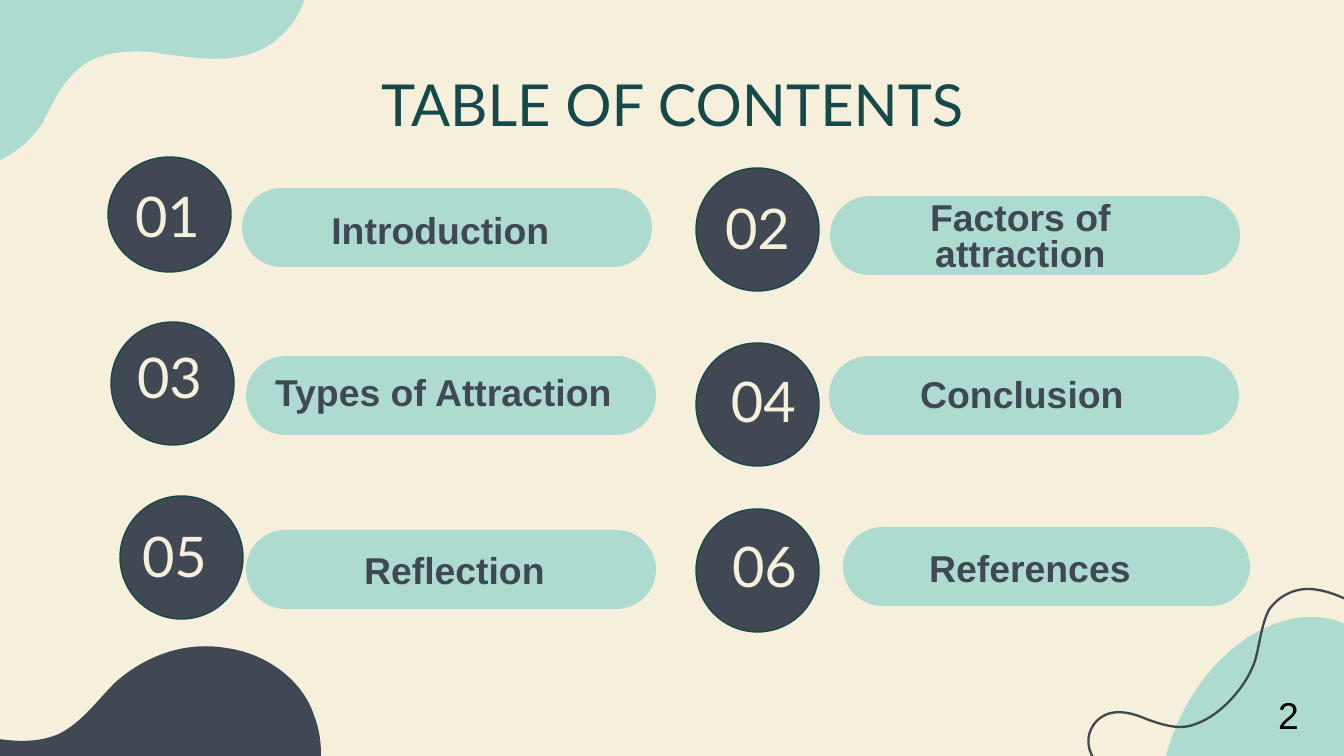
"""Build a table of contents slide with six numbered topics."""
from typing import NamedTuple

from lxml import etree
from pptx import Presentation
from pptx.dml.color import RGBColor
from pptx.enum.shapes import MSO_SHAPE
from pptx.enum.text import MSO_ANCHOR, PP_ALIGN
from pptx.oxml.ns import qn
from pptx.shapes.autoshape import Shape
from pptx.shapes.shapetree import SlideShapes
from pptx.util import Emu, Pt

EMU_PER_PX = 914400 / 134.4

CREAM = RGBColor(0xF6, 0xEF, 0xDC)
MINT = RGBColor(0xAD, 0xDB, 0xD0)
SLATE = RGBColor(0x3F, 0x48, 0x53)
TEAL = RGBColor(0x16, 0x4A, 0x4A)
BLACK = RGBColor(0, 0, 0)

OVAL = MSO_SHAPE.OVAL
ROUNDED = MSO_SHAPE.ROUNDED_RECTANGLE
CENTER = PP_ALIGN.CENTER
LEFT = PP_ALIGN.LEFT
MIDDLE = MSO_ANCHOR.MIDDLE
TOP = MSO_ANCHOR.TOP

Point = tuple[int, int]


class Box(NamedTuple):
    left: int
    top: int
    width: int
    height: int


class TextStyle(NamedTuple):
    font: str
    size: int
    color: RGBColor
    bold: bool = False
    align: PP_ALIGN = CENTER
    anchor: MSO_ANCHOR = MIDDLE
    spacing: float = 1.0


class Topic(NamedTuple):
    number: str
    label: str
    circle: Box
    number_box: Box
    pill: Box
    label_box: Box
    label_inset: int = 0


class Curve(NamedTuple):
    """A path whose steps hold one point for a line or three for a Bézier."""
    start: Point
    steps: list[tuple[Point, ...]]


TITLE = TextStyle("Lato", 31, TEAL, anchor=TOP)
NUMBER = TextStyle("Lato", 30, CREAM)
LABEL = TextStyle("Arial", 20, SLATE, bold=True, spacing=0.8)
PAGE = TextStyle("Arial", 20, BLACK, align=LEFT, anchor=TOP)

TOPICS = [
    Topic("01", "Introduction", Box(108, 157, 123, 115), Box(118, 192, 99, 47),
          Box(242, 188, 410, 79), Box(239, 194, 403, 79)),
    Topic("02", "Factors of attraction", Box(696, 168, 123, 123), Box(708, 176, 99, 103),
          Box(830, 196, 410, 79), Box(819, 187, 403, 103), label_inset=34),
    Topic("03", "Types of Attraction", Box(111, 322, 123, 123), Box(120, 325, 99, 103),
          Box(246, 356, 410, 79), Box(242, 356, 403, 79)),
    Topic("04", "Conclusion", Box(696, 343, 123, 123), Box(718, 349, 91, 103),
          Box(829, 356, 410, 79), Box(829, 368, 386, 59)),
    Topic("05", "Reflection", Box(120, 496, 123, 123), Box(125, 504, 99, 103),
          Box(246, 530, 410, 79), Box(267, 541, 375, 66)),
    Topic("06", "References", Box(696, 509, 123, 123), Box(715, 518, 99, 95),
          Box(843, 527, 407, 79), Box(837, 532, 386, 79)),
]

MINT_HILL = Curve((1313, 617), [
    ((1312, 617), (1310, 617), (1309, 617)), ((1288, 617), (1266, 626), (1247, 638)),
    ((1204, 667), (1177, 712), (1164, 763)), ((1359, 763),),
    ((1374, 745), (1384, 724), (1386, 706)), ((1390, 659), (1361, 617), (1313, 617)),
])
SLATE_HILL = Curve((314, 715), [
    ((302, 679), (265, 653), (226, 648)), ((185, 641), (146, 656), (117, 681)),
    ((98, 699), (83, 722), (59, 734)), ((24, 749), (-17, 736), (-54, 728)),
    ((-73, 723), (-94, 719), (-113, 719)), ((-113, 789),), ((316, 789),),
    ((323, 763), (323, 738), (314, 715)),
])
MINT_CLOUD = Curve((308, -28), [
    ((306, -38), (304, -50), (298, -58)), ((255, -117), (172, -43), (122, -89)),
    ((99, -110), (93, -125), (55, -113)), ((24, -103), (-1, -78), (-7, -46)),
    ((-9, -30), (-7, -12), (-8, 5)), ((-8, 15), (-9, 26), (-15, 34)),
    ((-31, 60), (-69, 65), (-85, 91)), ((-101, 121), (-75, 161), (-43, 167)),
    ((-9, 172), (23, 151), (42, 124)), ((52, 105), (60, 85), (77, 70)),
    ((97, 52), (125, 50), (152, 52)), ((156, 52), (160, 54), (164, 54)),
    ((195, 58), (227, 63), (255, 52)), ((288, 40), (310, 5), (308, -28)),
])
SQUIGGLE = Curve((1366, 610), [
    ((1347, 599), (1329, 590), (1309, 589)), ((1292, 589), (1278, 597), (1269, 610)),
    ((1261, 626), (1260, 644), (1255, 661)), ((1248, 682), (1231, 703), (1212, 716)),
    ((1204, 721), (1194, 726), (1184, 727)), ((1171, 728), (1157, 723), (1146, 719)),
    ((1130, 712), (1111, 708), (1098, 720)), ((1086, 731), (1086, 747), (1094, 759)),
    ((1098, 766), (1104, 773), (1110, 779)), ((1118, 786), (1125, 796), (1128, 806)),
    ((1133, 821), (1133, 837), (1128, 852)),
])


def px(length: int) -> Emu:
    return Emu(round(length * EMU_PER_PX))


def paint(shape: Shape, fill: RGBColor | None, line: RGBColor | None = None,
          weight: float = 0.75) -> None:
    shape.shadow.inherit = False
    if fill is None:
        shape.fill.background()
    else:
        shape.fill.solid()
        shape.fill.fore_color.rgb = fill
    if line is None:
        shape.line.fill.background()
    else:
        shape.line.color.rgb = line
        shape.line.width = Pt(weight)


def add_curve(shapes: SlideShapes, curve: Curve, closed: bool = True) -> Shape:
    """Draw the points as a freeform, then turn each group of three into a Bézier."""
    points = [(px(x), px(y)) for step in curve.steps for x, y in step]
    builder = shapes.build_freeform(*map(px, curve.start))
    builder.add_line_segments(points, close=closed)
    shape = builder.convert_to_shape()
    outline = next(shape.element.iter(qn("a:path")))
    segments = iter(outline.findall(qn("a:lnTo")))
    for step in curve.steps:
        group = [next(segments) for _ in step]
        if len(group) == 3:
            bezier = etree.Element(qn("a:cubicBezTo"))
            group[0].addprevious(bezier)
            for segment in group:
                bezier.append(segment[0])
                outline.remove(segment)
    return shape


def add_preset(shapes: SlideShapes, kind: MSO_SHAPE, box: Box) -> Shape:
    return shapes.add_shape(kind, *map(px, box))


def add_text(shapes: SlideShapes, text: str, box: Box, style: TextStyle,
             inset_x: int = 0, inset_y: int = 0) -> None:
    frame = shapes.add_textbox(*map(px, box)).text_frame
    frame.word_wrap = True
    frame.vertical_anchor = style.anchor
    frame.margin_left = frame.margin_right = px(inset_x)
    frame.margin_top = frame.margin_bottom = px(inset_y)
    paragraph = frame.paragraphs[0]
    paragraph.text = text
    paragraph.alignment = style.align
    paragraph.line_spacing = style.spacing
    paragraph.font.name = style.font
    paragraph.font.size = Pt(style.size)
    paragraph.font.bold = style.bold
    paragraph.font.color.rgb = style.color


def add_topic(shapes: SlideShapes, topic: Topic) -> None:
    pill = add_preset(shapes, ROUNDED, topic.pill)
    pill.adjustments[0] = 0.5
    paint(pill, MINT)
    paint(add_preset(shapes, OVAL, topic.circle), SLATE, TEAL)
    add_text(shapes, topic.label, topic.label_box, LABEL, inset_x=topic.label_inset)
    add_text(shapes, topic.number, topic.number_box, NUMBER)


def main() -> None:
    deck = Presentation()
    deck.slide_width, deck.slide_height = px(1344), px(756)
    slide = deck.slides.add_slide(deck.slide_layouts[6])
    slide.background.fill.solid()
    slide.background.fill.fore_color.rgb = CREAM
    shapes = slide.shapes
    for blob, color in ((MINT_HILL, MINT), (SLATE_HILL, SLATE), (MINT_CLOUD, MINT)):
        paint(add_curve(shapes, blob), color)
    paint(add_curve(shapes, SQUIGGLE, closed=False), None, SLATE, weight=1.25)
    add_text(shapes, "TABLE OF CONTENTS", Box(105, 69, 1134, 67), TITLE)
    for topic in TOPICS:
        add_topic(shapes, topic)
    add_text(shapes, "2", Box(1265, 685, 79, 59), PAGE, inset_x=13, inset_y=7)
    deck.save("out.pptx")


if __name__ == "__main__":
    main()
